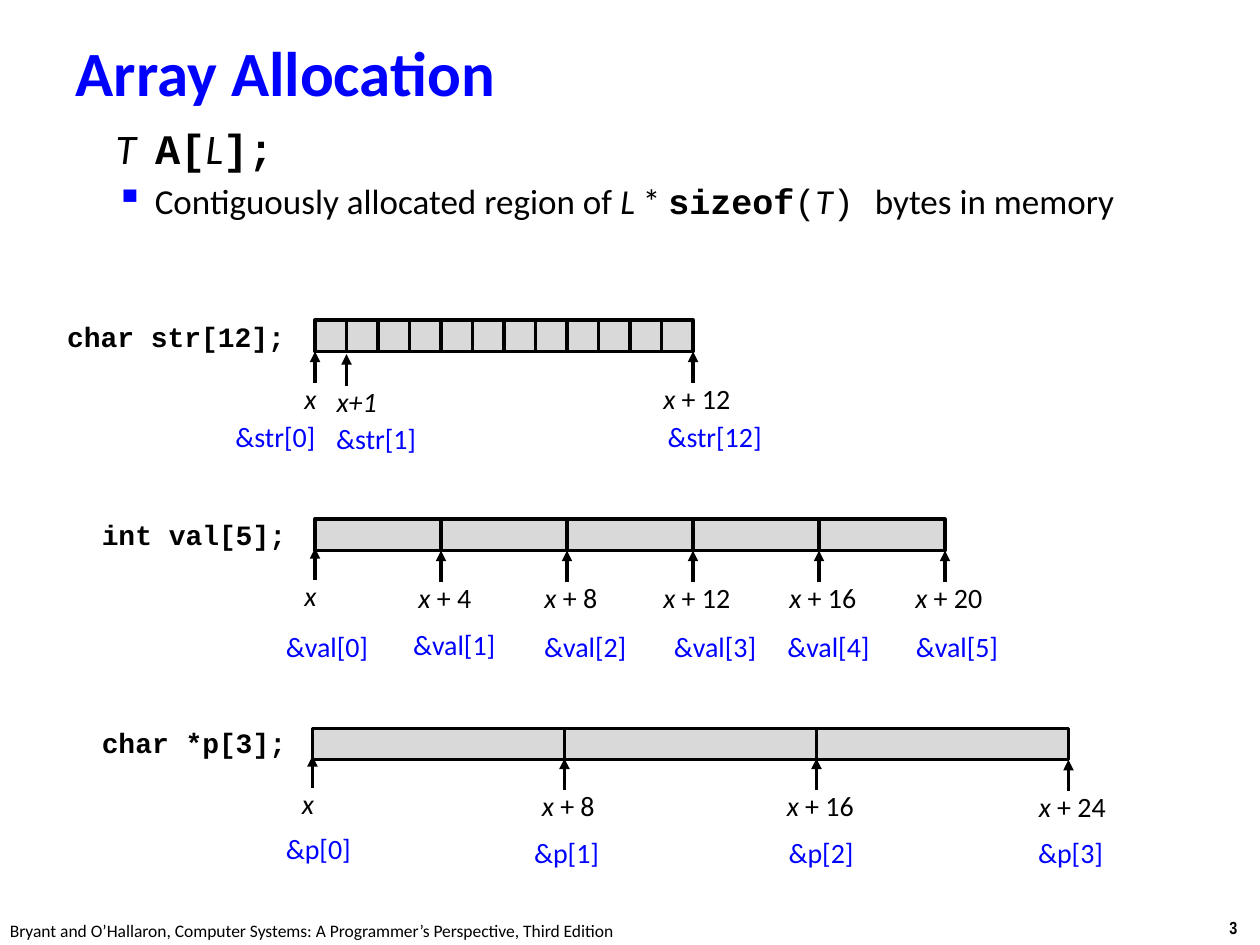
from lxml import etree
from pptx import Presentation
from pptx.dml.color import RGBColor
from pptx.enum.shapes import MSO_CONNECTOR as CONN, MSO_SHAPE as SHAPE
from pptx.enum.text import MSO_ANCHOR as ANCHOR, MSO_AUTO_SIZE as AUTO, PP_ALIGN as ALIGN
from pptx.oxml.ns import qn
from pptx.util import Inches, Pt

BLUE = RGBColor(0x00, 0x00, 0xFF)
BLACK = RGBColor(0x00, 0x00, 0x00)
GREY = RGBColor(0xD9, 0xD9, 0xD9)
SANS, MONO = "Calibri", "Courier New"

TITLE = "Array Allocation"
FOOTER = ("Bryant and O’Hallaron, Computer Systems: "
          "A Programmer’s Perspective, Third Edition")
PAGE = "3"

# Runs: text, font, bold, italic
SYNTAX = [("T  ", SANS, False, True), ("A[", MONO, True, False),
          ("L", SANS, False, True), ("];", MONO, True, False)]
MEANING = [("Contiguously allocated region of ", SANS, False, False),
           ("L", SANS, False, True), (" * ", SANS, False, False),
           ("sizeof", MONO, True, False), ("(", MONO, False, False),
           ("T", SANS, False, True), (") ", MONO, False, False),
           ("bytes in memory", SANS, False, False)]

# Each mark: byte offset, italic part, upright part, arrow gap,
#            reference, reference left, reference top
ARRAYS = [
    dict(code="char str[12];", code_at=(0.41, 2.49, 1.95), left=2.5, top=2.54,
         size=1, count=12, marks=[
             (0, "x", "", 0, "&str[0]", 1.77, 3.28),
             (1, "x+1", "", 0.02, "&str[1]", 2.57, 3.3),
             (12, "x ", "+ 12", 0, "&str[12]", 5.2, 3.28)]),
    dict(code="int val[5];", code_at=(0.7, 4.06, 1.67), left=2.5, top=4.12,
         size=4, count=5, marks=[
             (0, "x", "", -0.02, "&val[0]", 2.17, 4.95),
             (4, "x ", "+ 4", 0, "&val[1]", 3.18, 4.93),
             (8, "x ", "+ 8", 0, "&val[2]", 4.22, 4.95),
             (12, "x ", "+ 12", 0, "&val[3]", 5.25, 4.95),
             (16, "x ", "+ 16", 0, "&val[4]", 6.15, 4.95),
             (20, "x ", "+ 20", 0, "&val[5]", 7.17, 4.95)]),
    dict(code="char *p[3];", code_at=(0.7, 5.71, 1.67), left=2.48, top=5.78,
         size=8, count=3, marks=[
             (0, "x", "", -0.03, "&p[0]", 2.17, 6.55),
             (8, "x ", "+ 8", -0.01, "&p[1]", 4.14, 6.58),
             (16, "x ", "+ 16", -0.01, "&p[2]", 6.16, 6.58),
             (24, "x ", "+ 24", 0, "&p[3]", 8.14, 6.58)]),
]
BYTE_W = CELL_H = ARROW_H = 0.25
LABEL_DROP = 0.19   # from arrow tip to label box
TEXT_H = 0.37
# Label box by length of its italic part: offset from the mark, width
LABEL_BOX = {1: (-0.25, 0.43), 2: (-0.51, 1.08), 3: (-0.28, 0.72)}
REF_W = {5: 0.72, 7: 0.86, 8: 0.96}   # by number of characters


def add_runs(p, runs, size, color=BLACK):
    for text, font, bold, italic in runs:
        r = p.add_run()
        r.text = text
        f = r.font
        f.name, f.size, f.bold, f.italic = font, Pt(size), bold, italic
        f.color.rgb = color


def add_text(shapes, at, runs, size=16, color=BLACK, align=ALIGN.LEFT):
    box = shapes.add_textbox(*map(Inches, at))
    tf = box.text_frame
    tf.word_wrap = False
    p = tf.paragraphs[0]
    p.alignment = align
    add_runs(p, runs, size, color)


def add_cell(shapes, x, y, w):
    cell = shapes.add_shape(SHAPE.RECTANGLE, *map(Inches, (x, y, w, CELL_H)))
    cell.shadow.inherit = False
    cell.fill.solid()
    cell.fill.fore_color.rgb = GREY
    cell.line.color.rgb = BLACK
    cell.line.width = Pt(2)


def add_arrow(shapes, x, tip):
    arrow = shapes.add_connector(
        CONN.STRAIGHT, *map(Inches, (x, tip + ARROW_H, x, tip)))
    arrow.line.color.rgb = BLACK
    arrow.line.width = Pt(2)
    sp_pr = arrow.element.spPr
    etree.SubElement(sp_pr.find(qn("a:ln")), qn("a:tailEnd"), type="triangle")
    etree.SubElement(sp_pr, qn("a:effectLst"))


def add_title(s):
    title = s.shapes.title
    title.left, title.top, title.width, title.height = map(
        Inches, (0.5, 0.25, 6.5, 0.63))
    tf = title.text_frame
    tf.auto_size = AUTO.NONE
    tf.vertical_anchor = ANCHOR.MIDDLE
    p = tf.paragraphs[0]
    p.alignment = ALIGN.LEFT
    add_runs(p, [(TITLE, SANS, True, False)], 36, BLUE)


def add_definition(s):
    box = s.shapes.add_textbox(*map(Inches, (0.32, 0.92, 9.09, 1.77)))
    tf = box.text_frame
    tf.word_wrap = True
    for p, runs, size in ((tf.paragraphs[0], SYNTAX, 24),
                          (tf.add_paragraph(), MEANING, 20)):
        p.space_before = Pt(size * 0.2)
        add_runs(p, runs, size)
        p_pr = p._p.get_or_add_pPr()
        p_pr.set("marL", str(Inches(0.81)))
        p_pr.set("indent", str(Inches(-0.31)))
    color = etree.SubElement(p_pr, qn("a:buClr"))
    etree.SubElement(color, qn("a:srgbClr"), val=str(BLUE))
    etree.SubElement(p_pr, qn("a:buSzPct"), val="110000")
    etree.SubElement(p_pr, qn("a:buChar"), char="▪")


def add_array(s, array):
    left, top = array["left"], array["top"]
    add_text(s.shapes, (*array["code_at"], TEXT_H),
             [(array["code"], MONO, True, False)], align=ALIGN.RIGHT)
    diagram = s.shapes.add_group_shape().shapes
    cell_w = array["size"] * BYTE_W
    for i in range(array["count"]):
        add_cell(diagram, left + i * cell_w, top, cell_w)
    for offset, italic, upright, gap, ref, ref_x, ref_y in array["marks"]:
        x, tip = left + offset * BYTE_W, top + CELL_H + gap
        add_arrow(diagram, x, tip)
        dx, w = LABEL_BOX[len(italic)]
        runs = [(italic, SANS, False, True)]
        if upright:
            runs.append((upright, SANS, False, False))
        add_text(diagram, (x + dx, tip + LABEL_DROP, w, TEXT_H), runs,
                 align=ALIGN.CENTER)
        add_text(s.shapes, (ref_x, ref_y, REF_W[len(ref)], TEXT_H),
                 [(ref, SANS, False, False)], color=BLUE)


def main():
    prs = Presentation()
    prs.slide_width, prs.slide_height = Inches(10), Inches(7.5)
    s = prs.slides.add_slide(prs.slide_layouts[5])
    add_text(s.shapes, (9.66, 7.23, 0.34, 0.27),
             [(PAGE, "Arial Narrow", True, False)], 10)
    add_text(s.shapes, (-0.02, 7.25, 5.08, 0.27),
             [(FOOTER, SANS, False, False)], 10)
    add_title(s)
    add_definition(s)
    for array in ARRAYS:
        add_array(s, array)
    prs.save("out.pptx")


if __name__ == "__main__":
    main()
